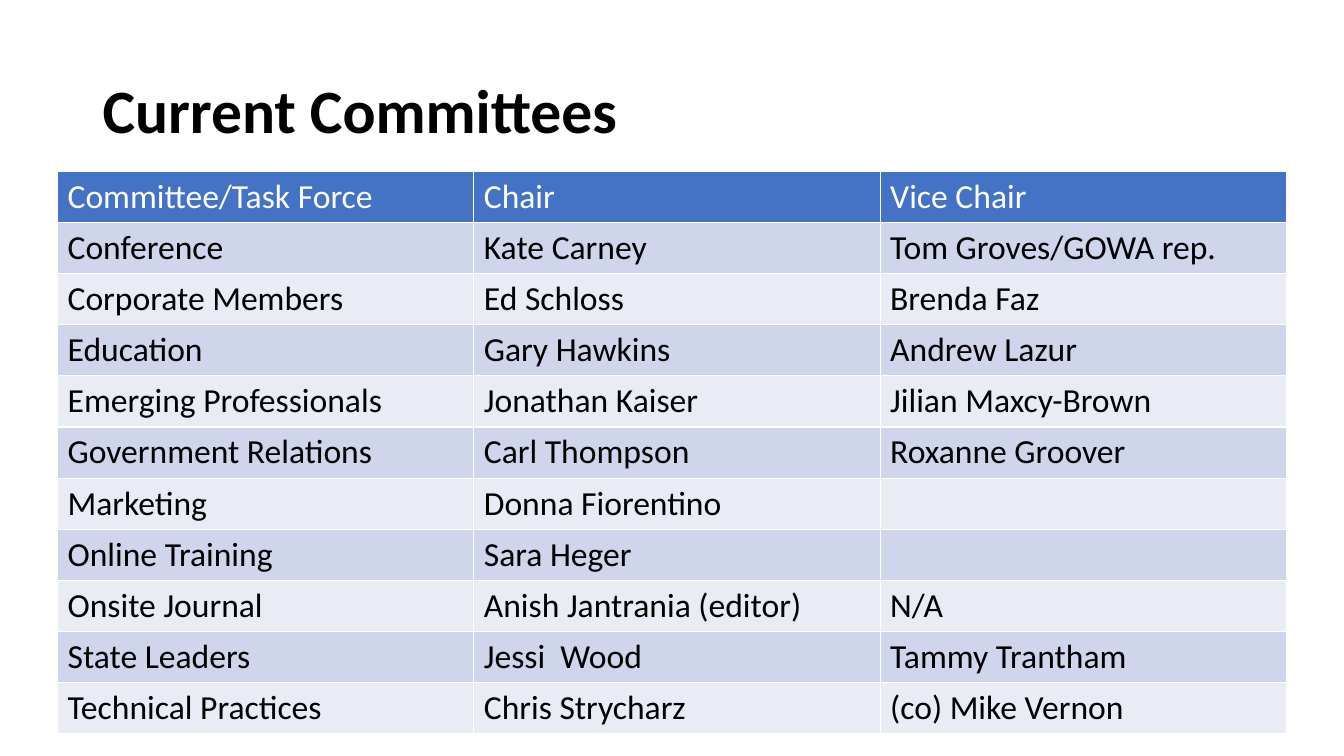
import pptx
import pptx.dml.color
import pptx.enum.text
import pptx.util
from dataclasses import dataclass

Cm = pptx.util.Cm


@dataclass(frozen=True)
class Theme:
    font: str = "Calibri"
    big: int = 44
    body: int = 24
    dark: str = "000000"
    light: str = "FFFFFF"
    head: str = "4472C4"
    bands: tuple = ("CFD5EA", "E9EBF5")


THEME = Theme()

ROWS = [
    ("Committee/Task Force", "Chair", "Vice Chair"),
    ("Conference", "Kate Carney", "Tom Groves/GOWA rep."),
    ("Corporate Members", "Ed Schloss", "Brenda Faz"),
    ("Education", "Gary Hawkins", "Andrew Lazur"),
    ("Emerging Professionals", "Jonathan Kaiser", "Jilian Maxcy-Brown"),
    ("Government Relations", "Carl Thompson", "Roxanne Groover"),
    ("Marketing", "Donna Fiorentino", ""),
    ("Online Training", "Sara Heger", ""),
    ("Onsite Journal", "Anish Jantrania (editor)", "N/A"),
    ("State Leaders", "Jessi  Wood", "Tammy Trantham"),
    ("Technical Practices", "Chris Strycharz", "(co) Mike Vernon"),
]
WIDTHS = (10.49, 10.24, 10.24)
HEIGHT = 1.27


def color(code):
    return pptx.dml.color.RGBColor.from_string(code)


def write(frame, text, size=THEME.body, ink=THEME.dark, bold=False, lead=None):
    """Put one left-aligned paragraph into a text frame."""
    frame.text = text
    para = frame.paragraphs[0]
    para.alignment = pptx.enum.text.PP_ALIGN.LEFT
    para.line_spacing = lead
    # Empty cells keep the same type size through the paragraph font
    for font in [para.font] + [run.font for run in para.runs]:
        font.name = THEME.font
        font.size = pptx.util.Pt(size)
        font.bold = bold
        font.color.rgb = color(ink)


def add_title(slide, text):
    title = slide.shapes.title
    title.left, title.top = Cm(2.33), Cm(1.01)
    title.width, title.height = Cm(29.21), Cm(3.68)
    frame = title.text_frame
    frame.word_wrap = True
    frame.auto_size = pptx.enum.text.MSO_AUTO_SIZE.NONE
    frame.vertical_anchor = pptx.enum.text.MSO_ANCHOR.MIDDLE
    write(frame, text, size=THEME.big, bold=True, lead=0.9)


def add_grid(slide, rows, left, top):
    table = slide.shapes.add_table(
        len(rows), len(WIDTHS), Cm(left), Cm(top),
        Cm(sum(WIDTHS)), Cm(HEIGHT * len(rows))).table
    for col, width in zip(table.columns, WIDTHS):
        col.width = Cm(width)
    for i, row in enumerate(rows):
        # Header first, then two bands in turn
        fill = THEME.bands[(i - 1) % 2] if i else THEME.head
        ink = THEME.dark if i else THEME.light
        for j, text in enumerate(row):
            cell = table.cell(i, j)
            cell.fill.solid()
            cell.fill.fore_color.rgb = color(fill)
            write(cell.text_frame, text, ink=ink)


def main():
    deck = pptx.Presentation()
    deck.slide_width, deck.slide_height = Cm(33.87), Cm(19.05)
    slide = deck.slides.add_slide(deck.slide_layouts[5])
    add_title(slide, "Current Committees")
    add_grid(slide, ROWS, left=1.45, top=4.32)
    deck.save("out.pptx")


if __name__ == "__main__":
    main()
